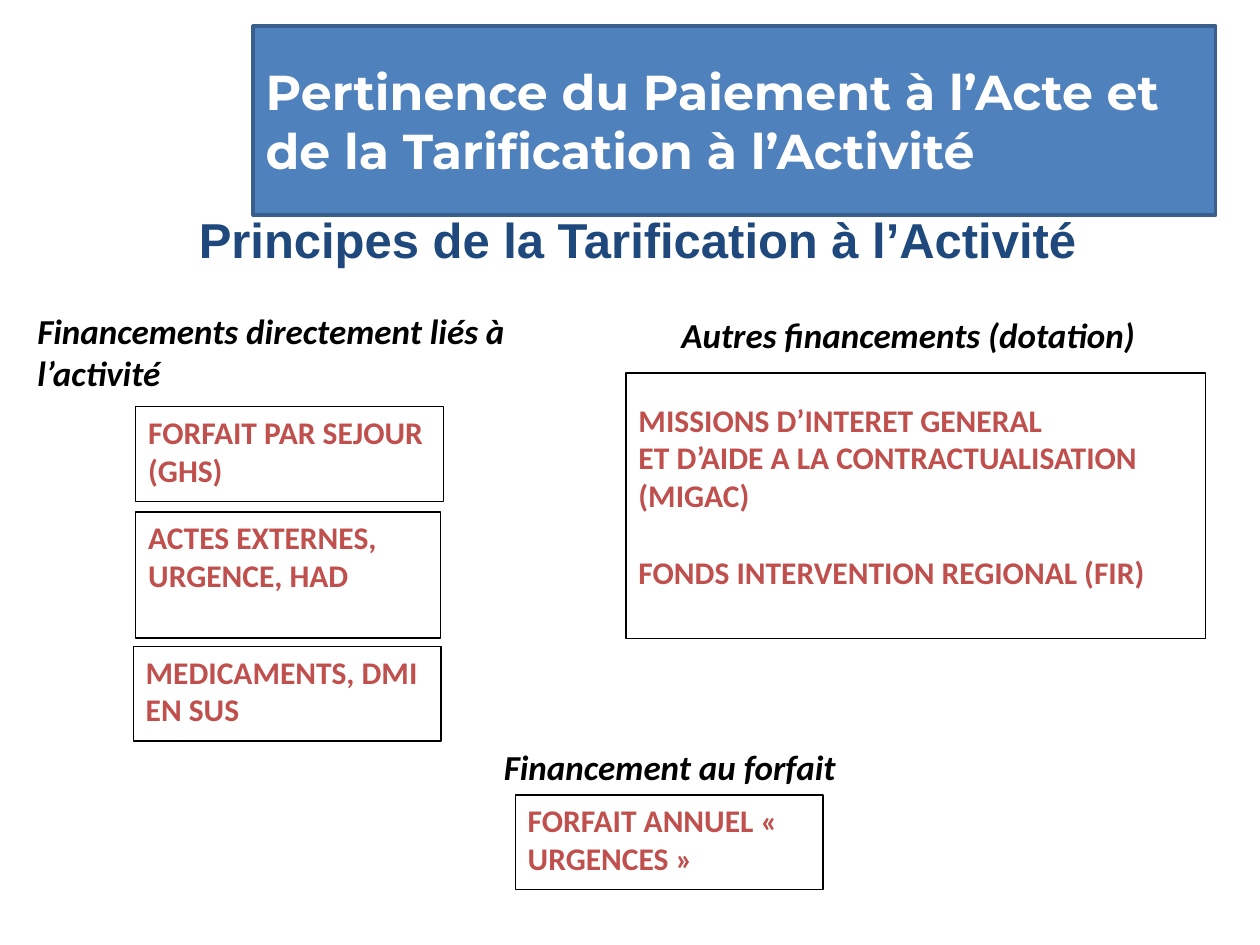
from pptx import Presentation
from pptx.dml.color import RGBColor
from pptx.enum.shapes import MSO_SHAPE as Shape
from pptx.enum.text import MSO_ANCHOR as Anchor, PP_ALIGN as Align
from pptx.util import Pt

COLORS = {"navy": "1F497D", "blue": "4F81BD", "edge": "3A5F8C",
          "white": "FFFFFF", "black": "000000", "red": "C0504D"}


def color(name):
    return RGBColor.from_string(COLORS[name])


def write(shape, lines, font, size, ink, italic=False,
          align=Align.LEFT, anchor=Anchor.TOP):
    frame = shape.text_frame
    frame.word_wrap = True
    frame.vertical_anchor = anchor
    frame.text = "\n".join(lines)
    for para in frame.paragraphs:
        para.alignment = align
        for run in para.runs:
            run.font.name = font
            run.font.size = Pt(size)
            run.font.bold = True
            run.font.italic = italic
            run.font.color.rgb = color(ink)
    return frame


def add_rect(slide, box, fill, edge, width):
    rect = slide.shapes.add_shape(Shape.RECTANGLE, *map(Pt, box))
    rect.shadow.inherit = False
    rect.fill.solid()
    rect.fill.fore_color.rgb = color(fill)
    rect.line.color.rgb = color(edge)
    rect.line.width = Pt(width)
    return rect


def add_title(slide, box, text):
    title = slide.shapes.add_textbox(*map(Pt, box))
    write(title, [text], "Arial", 28, "navy",
          align=Align.CENTER, anchor=Anchor.MIDDLE)


def add_banner(slide, box, text):
    rect = add_rect(slide, box, "blue", "edge", 2)
    write(rect, [text], "Montserrat", 28, "white", anchor=Anchor.MIDDLE)


def add_heading(slide, box, text):
    label = slide.shapes.add_textbox(*map(Pt, box))
    write(label, [text], "Calibri", 20, "black", italic=True)


def add_card(slide, box, *lines):
    rect = add_rect(slide, box, "white", "black", 0.75)
    return write(rect, lines, "Calibri", 18, "red")


def add_activity(slide, left, top):
    """Heading with its stack of funding cards."""
    add_heading(slide, (left, top, 294.5, 55.4),
                "Financements directement liés à l’activité")
    cards = [(63.4, 58.8, 175.8, 54, "FORFAIT PAR SEJOUR (GHS)"),
             (63.4, 119, 174.3, 72, "ACTES EXTERNES, URGENCE, HAD"),
             (62, 195.8, 175.8, 54, "MEDICAMENTS, DMI EN SUS")]
    for x, y, width, height, text in cards:
        add_card(slide, (left + x, top + y, width, height), text)


def add_grants(slide, left, top):
    add_heading(slide, (left + 24.5, top, 283.7, 31.5),
                "Autres financements (dotation)")
    frame = add_card(slide, (left, top + 37.5, 331.2, 151.7),
                     "MISSIONS D’INTERET GENERAL",
                     "ET D’AIDE A LA CONTRACTUALISATION (MIGAC)",
                     "FONDS INTERVENTION REGIONAL (FIR)")
    frame.margin_top = Pt(15.8)
    frame.paragraphs[-1].space_before = Pt(22)


def add_flat(slide, left, top):
    add_heading(slide, (left, top, 229, 31), "Financement au forfait")
    add_card(slide, (left + 13.7, top + 31.7, 175.8, 54),
             "FORFAIT ANNUEL «\u00a0URGENCES\u00a0»".replace("\u00a0", " "))


def main():
    deck = Presentation()
    deck.slide_width, deck.slide_height = Pt(720), Pt(540)
    slide = deck.slides.add_slide(deck.slide_layouts[6])
    add_title(slide, (8.6, 116.6, 711.4, 39.6),
              "Principes de la Tarification à l’Activité")
    add_banner(slide, (144.7, 15, 550, 108),
               "Pertinence du Paiement à l’Acte et de la Tarification à l’Activité")
    add_activity(slide, 14.2, 173.6)
    add_grants(slide, 357.8, 175.7)
    add_flat(slide, 280.8, 422.6)
    deck.save("out.pptx")


if __name__ == "__main__":
    main()
